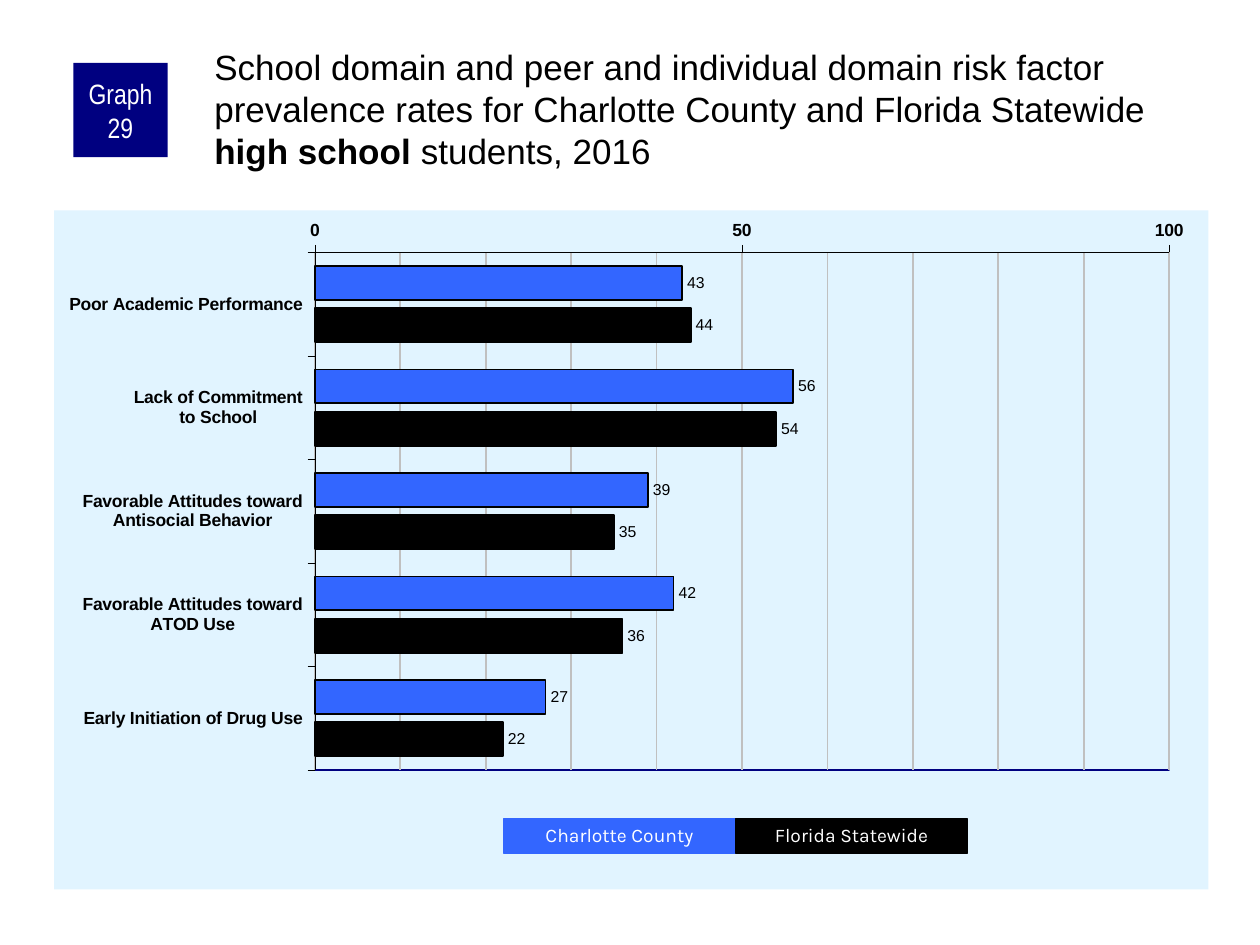
from copy import deepcopy

from lxml.etree import SubElement
from pptx import Presentation
from pptx.chart.data import CategoryChartData
from pptx.dml.color import RGBColor
from pptx.enum.chart import XL_AXIS_CROSSES, XL_CHART_TYPE, XL_LABEL_POSITION, XL_TICK_MARK
from pptx.enum.shapes import MSO_SHAPE
from pptx.enum.text import MSO_ANCHOR, MSO_AUTO_SIZE, PP_ALIGN
from pptx.oxml import parse_xml
from pptx.oxml.ns import nsdecls, qn
from pptx.util import Cm, Pt

NAVY = RGBColor(0x00, 0x00, 0x80)
BLUE = RGBColor(0x33, 0x66, 0xFF)
BLACK = RGBColor(0x00, 0x00, 0x00)
WHITE = RGBColor(0xFF, 0xFF, 0xFF)
SILVER = RGBColor(0xC0, 0xC0, 0xC0)
PALE_BLUE = RGBColor(0xE1, 0xF4, 0xFF)

TITLE = [
    ("School domain and peer and individual domain risk factor prevalence rates "
     "for Charlotte County and Florida Statewide ", False),
    ("high school", True),
    (" students, 2016", False),
]
BADGE = "Graph 29"
RISK_FACTORS = [
    ("Poor Academic Performance", 43, 44),
    ("Lack of Commitment\nto School", 56, 54),
    ("Favorable Attitudes toward\nAntisocial Behavior", 39, 35),
    ("Favorable Attitudes toward\nATOD Use", 42, 36),
    ("Early Initiation of Drug Use", 27, 22),
]
REGIONS = [("Charlotte County", BLUE), ("Florida Statewide", BLACK)]
PLOT_LAYOUT = {"x": 0.226, "y": 0.062, "w": 0.74, "h": 0.762}
KEY_LEFT, KEY_TOP, KEY_WIDTH, KEY_HEIGHT = 10.15, 16.51, 4.68, 0.69


def style_font(font, name, size, color, bold=False):
    font.name, font.size, font.bold = name, Pt(size), bold
    font.color.rgb = color


def add_span(para, text, name, size, color, bold=False):
    span = para.add_run()
    span.text = text
    style_font(span.font, name, size, color, bold)


def set_insets(frame, left, top, right, bottom):
    frame.margin_left, frame.margin_top = Cm(left), Cm(top)
    frame.margin_right, frame.margin_bottom = Cm(right), Cm(bottom)


def add_box(page, place, fill, text, font_name, size):
    box = page.shapes.add_shape(MSO_SHAPE.RECTANGLE, *[Cm(length) for length in place])
    box.shadow.inherit = False
    box.fill.solid()
    box.fill.fore_color.rgb = fill
    box.line.fill.background()
    frame = box.text_frame
    frame.word_wrap = True
    frame.vertical_anchor = MSO_ANCHOR.MIDDLE
    para = frame.paragraphs[0]
    para.alignment = PP_ALIGN.CENTER
    add_span(para, text, font_name, size, WHITE)
    return box


def add_title(page):
    title = page.shapes.title
    title.left, title.top, title.width, title.height = Cm(4.24), Cm(0.84), Cm(20.12), Cm(2.11)
    frame = title.text_frame
    frame.word_wrap = True
    frame.auto_size = MSO_AUTO_SIZE.NONE
    frame.vertical_anchor = MSO_ANCHOR.TOP
    set_insets(frame, 0.08, 0.08, 0, 0)
    para = frame.paragraphs[0]
    para.alignment = PP_ALIGN.LEFT
    for text, bold in TITLE:
        add_span(para, text, "Arial", 20, BLACK, bold)


def set_line(line, color, width):
    line.color.rgb = color
    line.width = Pt(width)


def style_axis(axis):
    axis.major_tick_mark = XL_TICK_MARK.OUTSIDE
    axis.minor_tick_mark = XL_TICK_MARK.NONE
    set_line(axis.format.line, BLACK, 0.25)
    style_font(axis.tick_labels.font, "Arial", 10, BLACK, True)


def style_areas(chart):
    chart_part = chart.element.find(qn("c:chart"))
    chart_part.addnext(parse_xml(
        f'<c:spPr {nsdecls("c", "a")}><a:solidFill><a:srgbClr val="{PALE_BLUE}"/></a:solidFill>'
        '<a:ln><a:noFill/></a:ln></c:spPr>'))
    plot_area = chart_part.find(qn("c:plotArea"))
    for layout in plot_area.findall(qn("c:layout")):
        plot_area.remove(layout)
    layout = parse_xml(f'<c:layout {nsdecls("c")}/>')
    manual = SubElement(layout, qn("c:manualLayout"))
    settings = {"layoutTarget": "inner", "xMode": "edge", "yMode": "edge", **PLOT_LAYOUT}
    for tag, value in settings.items():
        SubElement(manual, qn(f"c:{tag}")).set("val", str(value))
    plot_area.insert(0, layout)
    plot_area.append(parse_xml(
        f'<c:spPr {nsdecls("c", "a")}><a:noFill/><a:ln w="{Pt(1)}"><a:solidFill>'
        f'<a:srgbClr val="{NAVY}"/></a:solidFill></a:ln></c:spPr>'))


def style_gridlines(chart):
    axis = chart.value_axis
    axis.has_major_gridlines = axis.has_minor_gridlines = True
    set_line(axis.major_gridlines.format.line, SILVER, 1)
    axis_part = chart.element.find(".//" + qn("c:valAx"))
    major_style = axis_part.find(qn("c:majorGridlines")).find(qn("c:spPr"))
    axis_part.find(qn("c:minorGridlines")).append(deepcopy(major_style))


def add_risk_chart(page):
    names, *columns = zip(*RISK_FACTORS)
    data = CategoryChartData()
    data.categories = names
    for (region, _), values in zip(REGIONS, columns):
        data.add_series(region, values)
    chart = page.shapes.add_chart(
        XL_CHART_TYPE.BAR_CLUSTERED, Cm(1.09), Cm(4.24), Cm(23.27), Cm(13.69), data).chart
    chart.has_title = False
    chart.has_legend = False
    style_font(chart.font, "Arial", 11.8, BLACK)

    plot = chart.plots[0]
    plot.gap_width, plot.overlap = 80, -25
    plot.vary_by_categories = False
    for series, (_, color) in zip(plot.series, REGIONS):
        series.format.fill.solid()
        series.format.fill.fore_color.rgb = color
        set_line(series.format.line, BLACK, 1)
        labels = series.data_labels
        labels.show_value = True
        labels.position = XL_LABEL_POSITION.OUTSIDE_END
        style_font(labels.font, "Arial", 9, BLACK)

    style_axis(chart.category_axis)
    chart.category_axis.reverse_order = True
    chart.category_axis.crosses = XL_AXIS_CROSSES.MAXIMUM
    axis = chart.value_axis
    style_axis(axis)
    axis.minimum_scale, axis.maximum_scale = 0, 100
    axis.major_unit, axis.minor_unit = 50, 10
    style_gridlines(chart)
    style_areas(chart)


def add_key(page):
    for index, (region, color) in enumerate(REGIONS):
        place = (KEY_LEFT + index * KEY_WIDTH, KEY_TOP, KEY_WIDTH, KEY_HEIGHT)
        box = add_box(page, place, color, region, "Karla", 11)
        set_line(box.line, color, 0.75)
        box.text_frame.paragraphs[0].line_spacing = 0.9


def main():
    deck = Presentation()
    deck.slide_width, deck.slide_height = Cm(25.4), Cm(19.05)
    page = deck.slides.add_slide(deck.slide_layouts[5])
    add_risk_chart(page)
    badge = add_box(page, (1.48, 1.27, 1.9, 1.9), NAVY, BADGE, "Arial Narrow", 16)
    set_insets(badge.text_frame, 0.13, 0, 0.13, 0)
    add_title(page)
    add_key(page)
    deck.save("out.pptx")


if __name__ == "__main__":
    main()
